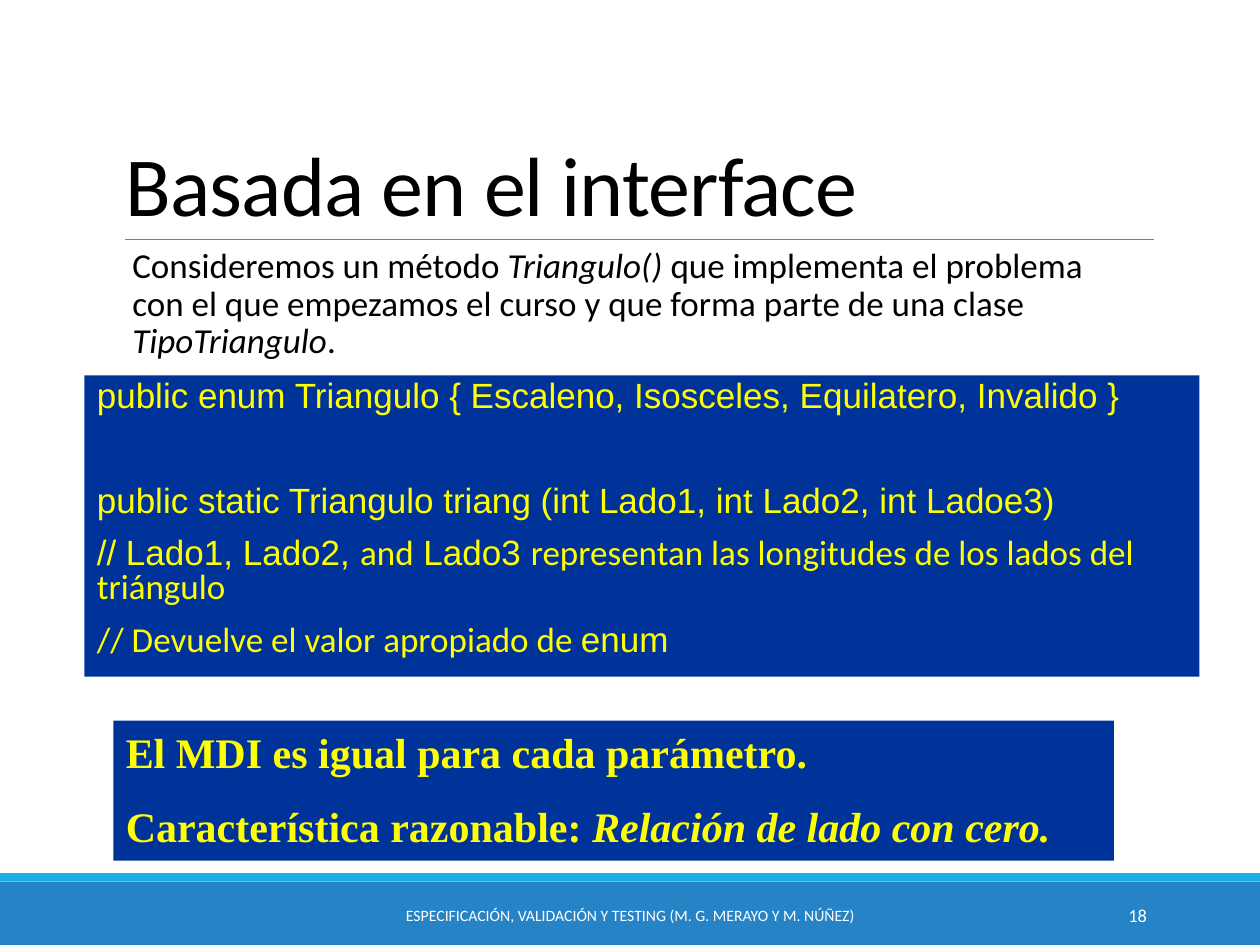
from dataclasses import dataclass

from lxml import etree
from pptx import Presentation
from pptx.dml.color import RGBColor
from pptx.enum.shapes import MSO_CONNECTOR, MSO_SHAPE
from pptx.enum.text import MSO_ANCHOR, PP_ALIGN
from pptx.oxml.ns import qn
from pptx.util import Inches, Pt

RECTANGLE = MSO_SHAPE.RECTANGLE
STRAIGHT = MSO_CONNECTOR.STRAIGHT
TOP, MIDDLE, BOTTOM = MSO_ANCHOR.TOP, MSO_ANCHOR.MIDDLE, MSO_ANCHOR.BOTTOM
LEFT, CENTER, RIGHT = PP_ALIGN.LEFT, PP_ALIGN.CENTER, PP_ALIGN.RIGHT


@dataclass(frozen=True)
class Theme:
    ink: str = "000000"
    paper: str = "FFFFFF"
    rule: str = "808080"
    footer: str = "2683C6"
    stripe: str = "1CADE4"
    panel: str = "003399"
    highlight: str = "FFFF00"
    sans: str = "Calibri"
    code: str = "Arial"
    serif: str = "Times New Roman"
    title_size: float = 48
    body_size: float = 20
    remark_size: float = 24
    footer_size: float = 9
    number_size: float = 10.5


THEME = Theme()


@dataclass(frozen=True)
class Box:
    left: float
    top: float
    width: float
    height: float

    def inner(self, x, y, width, height):
        return Box(self.left + x * self.width, self.top + y * self.height,
                   width * self.width, height * self.height)

    def lengths(self):
        return [Inches(v) for v in (self.left, self.top, self.width, self.height)]


def add_panel(slide, box, color):
    panel = slide.shapes.add_shape(RECTANGLE, *box.lengths())
    panel.shadow.inherit = False
    panel.fill.solid()
    panel.fill.fore_color.rgb = RGBColor.from_string(color)
    panel.line.fill.background()
    return panel


def write(holder, paragraphs, *, size, color, font=THEME.sans, bold=False,
          align=LEFT, anchor=TOP, leading=1.0, before=(), after=0,
          tracking=None, side_inset=0.1):
    frame = holder.text_frame
    frame.word_wrap = True
    frame.vertical_anchor = anchor
    frame.margin_left = frame.margin_right = Inches(side_inset)
    for index, runs in enumerate(paragraphs):
        paragraph = frame.paragraphs[0] if index == 0 else frame.add_paragraph()
        paragraph.alignment = align
        paragraph.line_spacing = leading
        paragraph.space_before = Pt(before[index] if before else 0)
        paragraph.space_after = Pt(after)
        for text, run_font, italic in runs:
            run = paragraph.add_run()
            run.text = text
            run.font.name = run_font or font
            run.font.size = Pt(size)
            run.font.bold = bold
            run.font.italic = italic
            run.font.color.rgb = RGBColor.from_string(color)
            if tracking is not None:
                run._r.get_or_add_rPr().set("spc", str(int(tracking * 100)))


def plain(text, font=None):
    return text, font, False


def slanted(text):
    return text, None, True


def add_heading(slide, box):
    title = slide.shapes.add_textbox(*box.lengths())
    write(title, [[plain("Basada en el interface")]], size=THEME.title_size,
          color=THEME.ink, anchor=BOTTOM, leading=0.85, tracking=-0.5)
    left, top, width, _ = box.inner(0.01, 1, 0.926, 0).lengths()
    rule = slide.shapes.add_connector(STRAIGHT, left, top, left + width, top)
    rule.line.color.rgb = RGBColor.from_string(THEME.rule)
    rule.line.width = Pt(0.5)
    etree.SubElement(rule._element.spPr, qn("a:effectLst"))


def add_introduction(slide, box):
    introduction = slide.shapes.add_textbox(*box.lengths())
    write(introduction, [[
        plain("Consideremos un método "),
        slanted("Triangulo() "),
        plain("que implementa el problema con el que empezamos el curso "
              "y que forma parte de una clase "),
        slanted("TipoTriangulo"),
        plain("."),
    ]], size=THEME.body_size, color=THEME.ink, leading=0.9, before=(18,),
        after=2, side_inset=0)


def add_code(slide, box):
    sans = THEME.sans
    write(add_panel(slide, box, THEME.panel), [
        [plain("public enum Triangulo { Escaleno, Isosceles, Equilatero, Invalido }")],
        [plain("public static Triangulo triang (int Lado1, int Lado2, int Ladoe3)")],
        [plain("// Lado1, Lado2, "), plain("and", sans), plain(" Lado3 "),
         plain("representan las longitudes de los lados del triángulo", sans)],
        [plain("// Devuelve el valor apropiado de ", sans), plain("enum")],
    ], size=THEME.body_size, color=THEME.highlight, font=THEME.code,
        leading=0.8, before=(0, 40.5, 11, 11))


def add_remark(slide, box):
    write(add_panel(slide, box, THEME.panel), [
        [plain("El MDI es igual para cada parámetro.")],
        [plain("Característica razonable: "), slanted("Relación de lado con cero.")],
    ], size=THEME.remark_size, color=THEME.highlight, font=THEME.serif,
        bold=True, before=(0, 13.5))


def add_footer(slide, box):
    add_panel(slide, box.inner(0, 0.12, 1, 0.88), THEME.footer)
    add_panel(slide, box.inner(0, 0, 1, 0.12), THEME.stripe)
    credits = slide.shapes.add_textbox(*box.inner(0.3, 0.23, 0.4, 0.7).lengths())
    write(credits, [[plain("ESPECIFICACIÓN, VALIDACIÓN Y TESTING (M. G. MERAYO Y M. NÚÑEZ)")]],
          size=THEME.footer_size, color=THEME.paper, align=CENTER, anchor=MIDDLE)
    number = slide.shapes.add_textbox(*box.inner(0.81, 0.23, 0.11, 0.7).lengths())
    write(number, [[plain("18")]], size=THEME.number_size, color=THEME.paper,
          align=RIGHT, anchor=MIDDLE)


def main():
    page = Box(0, 0, 10, 7.5)
    deck = Presentation()
    deck.slide_width, deck.slide_height = Inches(page.width), Inches(page.height)
    slide = deck.slides.add_slide(deck.slide_layouts[6])
    slide.background.fill.solid()
    slide.background.fill.fore_color.rgb = RGBColor.from_string(THEME.paper)

    row = 1 / 75
    column = 1 / 100
    regions = (
        (add_footer, 0, 69.3, 100, 5.7),
        (add_heading, 9, 3.1, 88.2, 15.9),
        (add_introduction, 10.5, 19.2, 76.5, 10.4),
        (add_code, 6.7, 29.8, 88.5, 23.9),
        (add_remark, 9, 57.2, 79.4, 11.1),
    )
    for add_region, x, y, columns, rows in regions:
        add_region(slide, page.inner(x * column, y * row, columns * column, rows * row))
    deck.save("out.pptx")


if __name__ == "__main__":
    main()
